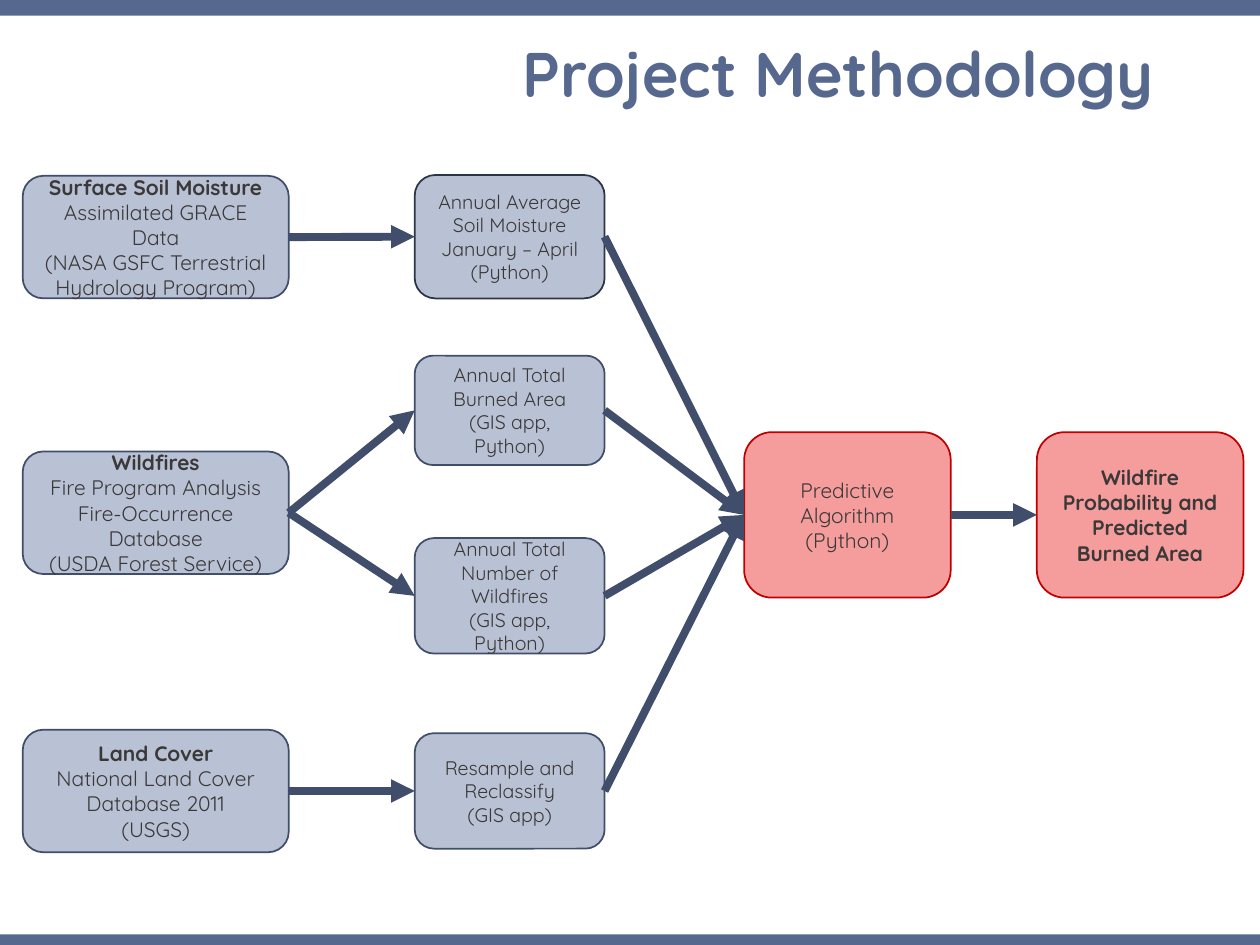
from lxml import etree
from pptx import Presentation
from pptx.dml.color import RGBColor
from pptx.enum.shapes import MSO_CONNECTOR, MSO_SHAPE
from pptx.enum.text import MSO_ANCHOR, PP_ALIGN
from pptx.oxml.ns import qn
from pptx.util import Pt

RECTANGLE, ROUNDED = MSO_SHAPE.RECTANGLE, MSO_SHAPE.ROUNDED_RECTANGLE
STRAIGHT = MSO_CONNECTOR.STRAIGHT
CENTER, RIGHT = PP_ALIGN.CENTER, PP_ALIGN.RIGHT
MIDDLE = MSO_ANCHOR.MIDDLE
LEFT_SIDE, RIGHT_SIDE = 1, 3
FONT = "Quicksand"
SLATE, NAVY, DARK = "57688F", "414E6B", "3B3838"
BLUE, PINK, RED = "B9C2D5", "F59D9D", "C00000"


def color(hex_string):
    return RGBColor.from_string(hex_string)


def add_text(paragraph, text, size, hex_string, bold, alignment):
    paragraph.alignment = alignment
    run = paragraph.add_run()
    run.text = text
    run.font.name = FONT
    run.font.size = Pt(size)
    run.font.bold = bold
    run.font.color.rgb = color(hex_string)


presentation = Presentation()
presentation.slide_width, presentation.slide_height = Pt(720), Pt(540)
slide = presentation.slides.add_slide(presentation.slide_layouts[6])
shapes = slide.shapes

# Bands along the top and bottom edges
for top, height in ((0, 9), (534, 6)):
    band = shapes.add_shape(RECTANGLE, 0, Pt(top), Pt(720), Pt(height))
    band.shadow.inherit = False
    band.fill.solid()
    band.fill.fore_color.rgb = color(SLATE)
    band.line.fill.background()

# Title
title = shapes.add_textbox(Pt(38), Pt(21), Pt(628.5), Pt(91))
title.text_frame.word_wrap = True
title_paragraph = title.text_frame.paragraphs[0]
title_paragraph.line_spacing = 0.9
add_text(title_paragraph, "Project Methodology", 36, SLATE, True, RIGHT)

# Columns: left, width, text size, fill, outline
SOURCE = (13, 152, 12, BLUE, NAVY)
STEP = (237, 108.5, 11.2, BLUE, NAVY)
SOIL_STEP = (237, 108.5, 11.2, BLUE, "2C3448")
MODEL = (425.25, 118, 12, PINK, RED)
RESULT = (592.5, 118, 12, PINK, RED)

# Boxes: name, column, middle height, height, bold heading, plain lines
boxes = [
    ("soil", SOURCE, 135.5, 70, "Surface Soil Moisture",
     ["Assimilated GRACE Data", "(NASA GSFC Terrestrial Hydrology Program)"]),
    ("fires", SOURCE, 293, 70, "Wildfires",
     ["Fire Program Analysis Fire-Occurrence Database", "(USDA Forest Service)"]),
    ("land", SOURCE, 452, 70, "Land Cover",
     ["National Land Cover Database 2011", "(USGS)"]),
    ("average", SOIL_STEP, 135.25, 70.5, None,
     ["Annual Average", "Soil Moisture January – April", "(Python)"]),
    ("area", STEP, 234.5, 62.5, None,
     ["Annual Total Burned Area", "(GIS app, Python)"]),
    ("number", STEP, 340.5, 66, None,
     ["Annual Total Number of Wildfires", "(GIS app, Python)"]),
    ("resample", STEP, 452, 66, None,
     ["Resample and Reclassify", "(GIS app)"]),
    ("model", MODEL, 294.25, 94.5, None,
     ["Predictive Algorithm", "(Python)"]),
    ("result", RESULT, 294.25, 94.5,
     "Wildfire Probability and Predicted Burned Area", []),
]
box_by_name = {}
for name, column, middle, height, heading, lines in boxes:
    left, width, size, fill, outline = column
    box = shapes.add_shape(ROUNDED, Pt(left), Pt(middle - height / 2),
                           Pt(width), Pt(height))
    box.shadow.inherit = False
    box.fill.solid()
    box.fill.fore_color.rgb = color(fill)
    box.line.color.rgb = color(outline)
    box.line.width = Pt(1)
    frame = box.text_frame
    frame.word_wrap = True
    frame.vertical_anchor = MIDDLE
    texts = [(heading, True)] if heading else []
    texts += [(line, False) for line in lines]
    for index, (text, bold) in enumerate(texts):
        paragraph = frame.add_paragraph() if index else frame.paragraphs[0]
        add_text(paragraph, text, size, DARK, bold, CENTER)
    box_by_name[name] = box

# Arrows from the right side of one box to the left side of the next
arrows = [
    ("soil", "average"), ("fires", "area"), ("fires", "number"),
    ("land", "resample"), ("average", "model"), ("area", "model"),
    ("number", "model"), ("resample", "model"), ("model", "result"),
]
for start, end in arrows:
    arrow = shapes.add_connector(STRAIGHT, 0, 0, 0, 0)
    arrow.begin_connect(box_by_name[start], RIGHT_SIDE)
    arrow.end_connect(box_by_name[end], LEFT_SIDE)
    arrow.line.color.rgb = color(NAVY)
    arrow.line.width = Pt(4.5)
    properties = arrow.element.spPr
    line = properties.find(qn("a:ln"))
    etree.SubElement(line, qn("a:tailEnd"), type="triangle")
    etree.SubElement(properties, qn("a:effectLst"))

presentation.save("out.pptx")
